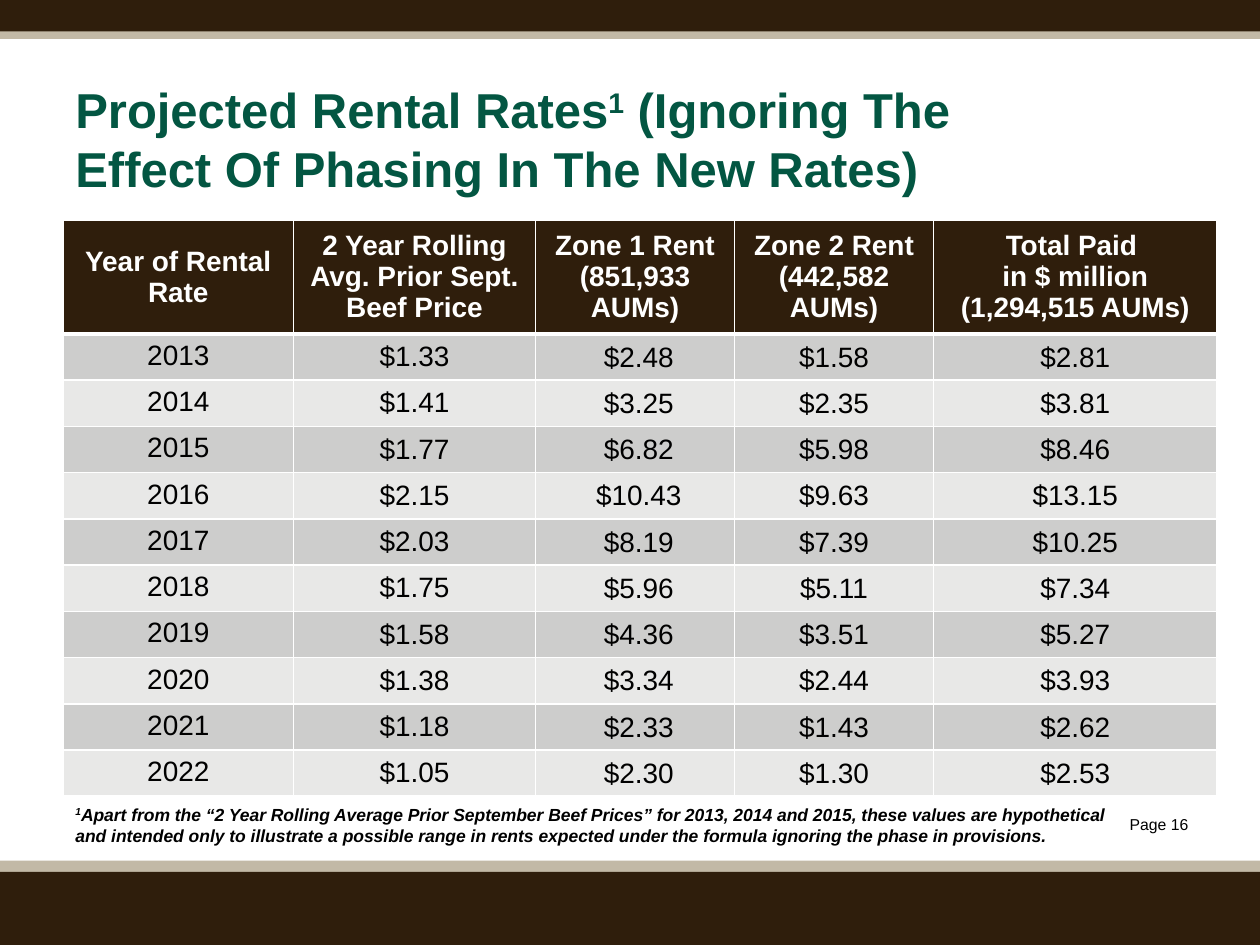
from dataclasses import dataclass

from lxml.etree import SubElement
from pptx import Presentation
from pptx.dml.color import RGBColor
from pptx.enum.shapes import MSO_SHAPE as Shape
from pptx.enum.text import MSO_ANCHOR as Anchor, PP_ALIGN as Align
from pptx.oxml.ns import qn
from pptx.util import Inches, Pt

BROWN, TAN, GREEN = "2F1E0C", "C2B9A6", "035642"
WHITE, BLACK = "FFFFFF", "000000"
BANDS = ("CDCDCC", "E8E8E7")


@dataclass
class Bar:
    top: float
    height: float
    fill: str


@dataclass
class Column:
    head: str
    width: float
    form: str = "{}"
    inset: float = 0.1
    anchor: Anchor = Anchor.MIDDLE


BARS = [
    Bar(6.83, 0.17, TAN),
    Bar(6.92, 0.58, BROWN),
    Bar(0.23, 0.08, TAN),
    Bar(0, 0.25, BROWN),
]
COLUMNS = [
    Column("Year of Rental Rate", 1.83, anchor=Anchor.TOP),
    Column("2 Year Rolling Avg. Prior Sept. Beef Price", 1.92, "${}"),
    Column("Zone 1 Rent (851,933 AUMs)", 1.58, " ${}", 0.01),
    Column("Zone 2 Rent (442,582 AUMs)", 1.58, " ${} ", 0.01),
    Column("Total Paid \nin $ million\n(1,294,515 AUMs)", 2.25, " ${} ", 0.01),
]
RATES = [
    ("2013", "1.33", "2.48", "1.58", "2.81"),
    ("2014", "1.41", "3.25", "2.35", "3.81"),
    ("2015", "1.77", "6.82", "5.98", "8.46"),
    ("2016", "2.15", "10.43", "9.63", "13.15"),
    ("2017", "2.03", "8.19", "7.39", "10.25"),
    ("2018", "1.75", "5.96", "5.11", "7.34"),
    ("2019", "1.58", "4.36", "3.51", "5.27"),
    ("2020", "1.38", "3.34", "2.44", "3.93"),
    ("2021", "1.18", "2.33", "1.43", "2.62"),
    ("2022", "1.05", "2.30", "1.30", "2.53"),
]
TITLE = "Projected Rental Rates^1^ (Ignoring The\vEffect Of Phasing In The New Rates)"
NOTE = (
    "^1^Apart from the “2 Year Rolling Average Prior September Beef Prices” "
    "for 2013, 2014 and 2015, these values are hypothetical and intended only "
    "to illustrate a possible range in rents expected under the formula "
    "ignoring the phase in provisions."
)


def paint(color, code: str) -> None:
    color.rgb = RGBColor.from_string(code)


def fill(item, code: str) -> None:
    item.fill.solid()
    paint(item.fill.fore_color, code)


def write(frame, text: str, *, size: float, color: str = BLACK,
          bold: bool = False, italic: bool = False, align=Align.LEFT) -> None:
    frame.word_wrap = True
    for row, block in enumerate(text.split("\n")):
        para = frame.add_paragraph() if row else frame.paragraphs[0]
        para.alignment = align
        for index, line in enumerate(block.split("\v")):
            if index:
                para.add_line_break()
            for part, piece in enumerate(line.split("^")):
                if not piece:
                    continue
                run = para.add_run()
                run.text = piece
                font = run.font
                font.name, font.size = "Arial", Pt(size)
                font.bold, font.italic = bold, italic
                paint(font.color, color)
                if part % 2:
                    run._r.get_or_add_rPr().set("baseline", "30000")


def add_bar(slide, bar: Bar) -> None:
    shape = slide.shapes.add_shape(
        Shape.RECTANGLE, 0, Inches(bar.top), Inches(10), Inches(bar.height))
    shape.shadow.inherit = False
    shape.line.fill.background()
    fill(shape, bar.fill)


def add_text(slide, left: float, top: float, width: float, height: float,
             text: str, **style) -> None:
    box = slide.shapes.add_textbox(
        Inches(left), Inches(top), Inches(width), Inches(height))
    write(box.text_frame, text, **style)


def edge(cell, top: float = 1, bottom: float = 1) -> None:
    props = cell._tc.get_or_add_tcPr()
    for side, width in (("L", 1), ("R", 1), ("T", top), ("B", bottom)):
        line = SubElement(props, qn(f"a:ln{side}"), w=str(Pt(width)))
        solid = SubElement(line, qn("a:solidFill"))
        SubElement(solid, qn("a:srgbClr"), val=WHITE)


def add_rates(slide) -> None:
    total = sum(col.width for col in COLUMNS)
    table = slide.shapes.add_table(
        len(RATES) + 1, len(COLUMNS), Inches(0.5), Inches(1.75),
        Inches(total), Inches(4.05)).table
    table.horz_banding = False
    for index, row in enumerate(table.rows):
        row.height = Inches(0.32 if index else 0.85)
    for index, col in enumerate(COLUMNS):
        table.columns[index].width = Inches(col.width)
        head = table.cell(0, index)
        edge(head, bottom=3)
        fill(head, BROWN)
        head.vertical_anchor = Anchor.MIDDLE
        write(head.text_frame, col.head, size=16, color=WHITE, bold=True,
              align=Align.CENTER)
        for row, rates in enumerate(RATES, 1):
            cell = table.cell(row, index)
            edge(cell, top=3 if row == 1 else 1)
            fill(cell, BANDS[(row - 1) % 2])
            cell.vertical_anchor = col.anchor
            cell.margin_left = cell.margin_right = Inches(col.inset)
            if col.inset < 0.1:
                cell.margin_top, cell.margin_bottom = Inches(0.01), 0
            write(cell.text_frame, col.form.format(rates[index]), size=16,
                  align=Align.CENTER)


def main() -> None:
    deck = Presentation()
    deck.slide_width, deck.slide_height = Inches(10), Inches(7.5)
    slide = deck.slides.add_slide(deck.slide_layouts[6])
    for bar in BARS:
        add_bar(slide, bar)
    add_text(slide, 8.45, 6.42, 1.08, 0.25, "Page 16", size=9, align=Align.RIGHT)
    add_text(slide, 0.5, 0.58, 8, 0.8, TITLE, size=28, color=GREEN, bold=True)
    add_rates(slide)
    add_text(slide, 0.5, 6.33, 8.42, 0.44, NOTE, size=10, bold=True, italic=True)
    deck.save("out.pptx")


if __name__ == "__main__":
    main()
